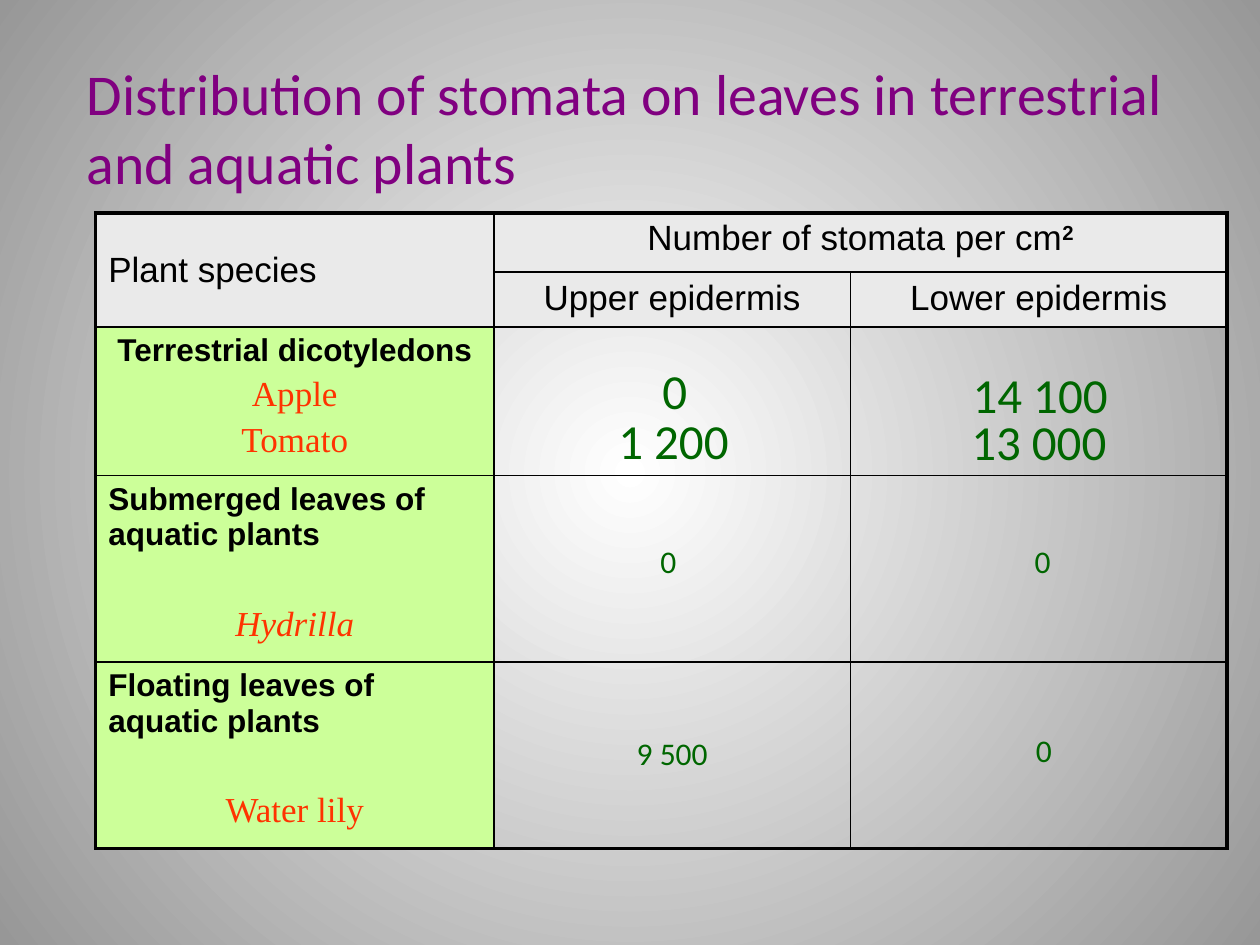
from pptx import Presentation
from pptx.dml.color import RGBColor as Rgb
from pptx.enum.text import MSO_ANCHOR as Anchor, MSO_AUTO_SIZE as AutoSize, PP_ALIGN as Align
from pptx.oxml import parse_xml
from pptx.oxml.ns import nsdecls
from pptx.util import Inches, Pt

COLORS = {"title": "800080", "ink": "000000", "species": "FF3300", "count": "006600",
          "header": "EAEAEA", "group": "CCFF99", "centre": "FFFFFF", "edge": "979797"}
TITLE = "Distribution of stomata on leaves in terrestrial and aquatic plants"
HEADERS = [
    (0, 0, Align.LEFT, "Plant species", ""),
    (0, 1, Align.CENTER, "Number of stomata per cm", "2"),
    (1, 1, Align.CENTER, "Upper epidermis", ""),
    (1, 2, Align.CENTER, "Lower epidermis", ""),
]
GROUPS = [
    ("Terrestrial dicotyledons", Align.CENTER, ["Apple", "Tomato"], 4, False),
    ("Submerged leaves of aquatic plants", Align.LEFT, ["Hydrilla"], 30, True),
    ("Floating leaves of aquatic plants", Align.LEFT, ["Water lily"], 30, False),
]
COUNTS = {
    1: [("0", 28, 0.4, 2.81, 0.02), ("1 200", 28, 1.08, 3.21, 0.01),
        ("0", 18, 0.42, 4.25, -0.03), ("9 500", 18, 1.2, 5.78, 0)],
    2: [("14 100", 28, 1.27, 2.84, 0.01), ("13 000", 28, 1.27, 3.22, 0),
        ("0", 18, 0.42, 4.25, 0.03), ("0", 18, 0.42, 5.75, 0.04)],
}
BOX_HEIGHTS = {28: 0.57, 18: 0.63}
LEFT, TOP = 0.76, 1.69
COLUMNS = [3.16, 2.83, 2.99]
ROWS = [0.47, 0.43, 1.18, 1.48, 1.48]
THICK, THIN = 2.25, 1


def add_span(para, text, size, color, font, bold=False, italic=False):
    span = para.add_run()
    span.text = text
    span.font.size = Pt(size)
    span.font.name = font
    span.font.bold = bold
    span.font.italic = italic
    span.font.color.rgb = Rgb.from_string(COLORS[color])
    return span


def add_text(shapes, text, area, size, color, align, wrap):
    box = shapes.add_textbox(*map(Inches, area))
    frame = box.text_frame
    frame.word_wrap = wrap
    frame.auto_size = AutoSize.SHAPE_TO_FIT_TEXT
    para = frame.paragraphs[0]
    para.alignment = align
    add_span(para, text, size, color, "Calibri")


def paint(cell, color):
    cell.fill.solid()
    cell.fill.fore_color.rgb = Rgb.from_string(COLORS[color])


def add_borders(cell, row, column):
    bottom = row + (cell.span_height if cell.is_merge_origin else 1)
    right = column + (cell.span_width if cell.is_merge_origin else 1)
    outer = {"lnL": column == 0, "lnR": right == len(COLUMNS),
             "lnT": row == 0, "lnB": bottom == len(ROWS)}
    props = cell._tc.get_or_add_tcPr()
    for index, (tag, thick) in enumerate(outer.items()):
        width = Pt(THICK if thick else THIN)
        props.insert(index, parse_xml(
            f'<a:{tag} {nsdecls("a")} w="{width}"><a:solidFill>'
            f'<a:srgbClr val="{COLORS["ink"]}"/></a:solidFill></a:{tag}>'))


def add_background(page):
    fill = page.background.fill
    fill.gradient()
    for stop, color in zip(fill.gradient_stops, ("centre", "edge")):
        stop.color.rgb = Rgb.from_string(COLORS[color])
    gradient = page.background._cSld.bg.bgPr.find(".//{*}gradFill")
    gradient.replace(gradient.find("{*}lin"), parse_xml(
        f'<a:path {nsdecls("a")} path="circle">'
        '<a:fillToRect l="50000" t="50000" r="50000" b="50000"/></a:path>'))


def add_stomata_table(page):
    table = page.shapes.add_table(len(ROWS), len(COLUMNS), Inches(LEFT), Inches(TOP),
                                  Inches(sum(COLUMNS)), Inches(sum(ROWS))).table
    table.first_row = table.horz_banding = False
    for column, width in zip(table.columns, COLUMNS):
        column.width = Inches(width)
    for row, height in zip(table.rows, ROWS):
        row.height = Inches(height)
    table.cell(0, 0).merge(table.cell(1, 0))
    table.cell(0, 1).merge(table.cell(0, 2))
    table.cell(0, 0).vertical_anchor = Anchor.MIDDLE
    for row in range(len(ROWS)):
        for column in range(len(COLUMNS)):
            cell = table.cell(row, column)
            cell.fill.background()
            if not cell.is_spanned:
                add_borders(cell, row, column)
    for row, column, align, text, power in HEADERS:
        cell = table.cell(row, column)
        paint(cell, "header")
        para = cell.text_frame.paragraphs[0]
        para.alignment = align
        add_span(para, text, 20, "ink", "Arial")
        if power:
            raised = add_span(para, power, 20, "ink", "Arial", bold=True)
            raised.font._element.set("baseline", "30000")
    for row, (heading, align, species, gap, italic) in enumerate(GROUPS, start=2):
        cell = table.cell(row, 0)
        paint(cell, "group")
        para = cell.text_frame.paragraphs[0]
        para.alignment = align
        add_span(para, heading, 18, "ink", "Arial", bold=True)
        for name in species:
            para = cell.text_frame.add_paragraph()
            para.alignment = Align.CENTER
            para.space_before = Pt(gap)
            add_span(para, name, 20, "species", "Times New Roman", italic=italic)


def add_counts(page):
    for column, counts in COUNTS.items():
        group = page.shapes.add_group_shape()
        centre = LEFT + sum(COLUMNS[:column]) + COLUMNS[column] / 2
        for text, size, width, top, nudge in counts:
            area = (centre + nudge - width / 2, top, width, BOX_HEIGHTS[size])
            add_text(group.shapes, text, area, size, "count", Align.CENTER, False)


def main():
    deck = Presentation()
    deck.slide_width, deck.slide_height = Inches(10), Inches(7.5)
    page = deck.slides.add_slide(deck.slide_layouts[6])
    add_background(page)
    add_text(page.shapes, TITLE, (0.59, 0.41, 9.36, 1.2), 33, "title", Align.LEFT, True)
    add_stomata_table(page)
    add_counts(page)
    deck.save("out.pptx")


if __name__ == "__main__":
    main()
